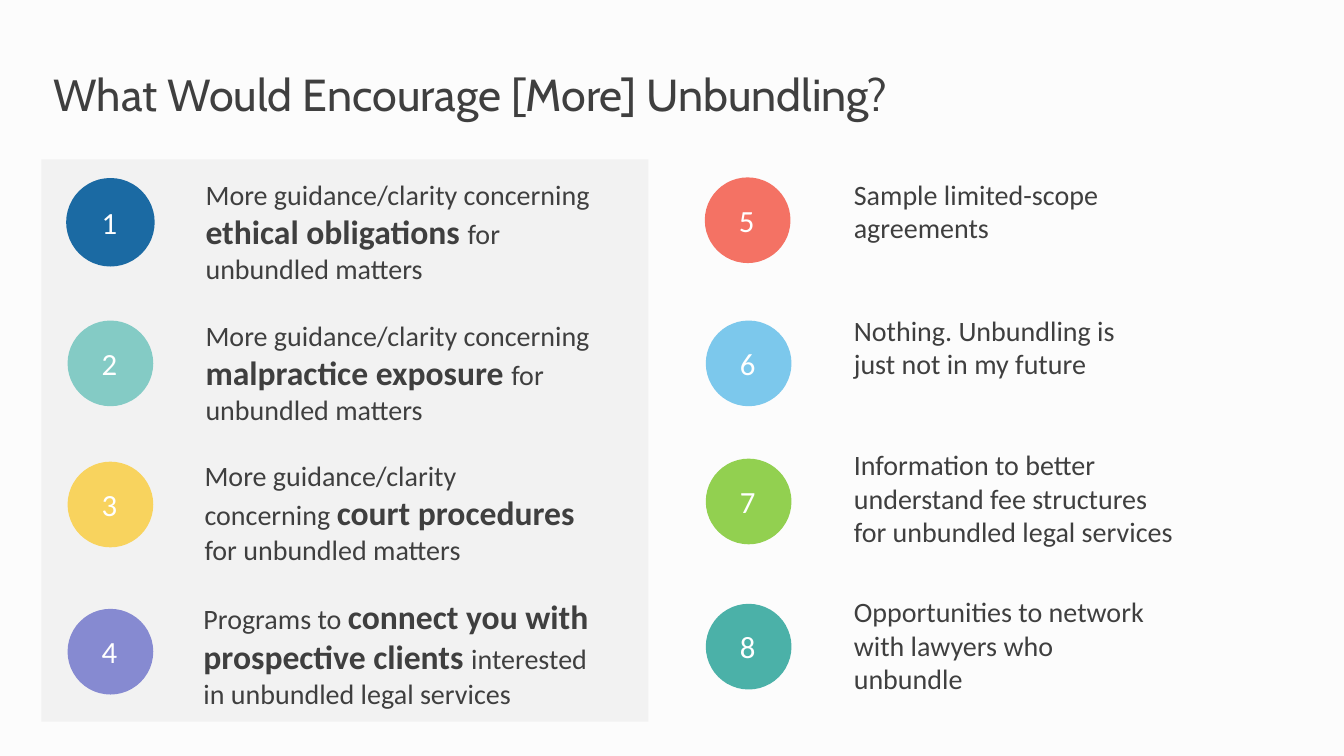
from pptx import Presentation
from pptx.dml.color import RGBColor
from pptx.enum.shapes import MSO_SHAPE
from pptx.enum.text import MSO_ANCHOR, PP_ALIGN
from pptx.util import Inches, Pt

RECTANGLE, OVAL = MSO_SHAPE.RECTANGLE, MSO_SHAPE.OVAL
MIDDLE, LEFT = MSO_ANCHOR.MIDDLE, PP_ALIGN.LEFT

BACKGROUND = RGBColor(0xFC, 0xFC, 0xFC)
PANEL = RGBColor(0xF2, 0xF2, 0xF2)
INK = RGBColor(0x3F, 0x3F, 0x3F)
WHITE = RGBColor(0xFF, 0xFF, 0xFF)
BLUE = RGBColor(0x1B, 0x6A, 0xA3)
MINT = RGBColor(0x84, 0xCB, 0xC5)
YELLOW = RGBColor(0xF8, 0xD3, 0x5E)
VIOLET = RGBColor(0x86, 0x8A, 0xD1)
CORAL = RGBColor(0xF4, 0x72, 0x64)
SKY = RGBColor(0x7C, 0xC8, 0xEC)
GREEN = RGBColor(0x92, 0xD0, 0x50)
TEAL = RGBColor(0x4B, 0xB1, 0xA8)

TITLE = {"name": "Cabin", "size": Pt(32), "bold": False, "color": INK}
BODY = {"name": "Calibri", "size": Pt(20), "bold": False, "color": INK}
STRONG = {**BODY, "size": Pt(24), "bold": True}
NUMBER = {**BODY, "size": Pt(22), "color": WHITE}

CIRCLE_SIZE = 0.85
TEXT_HEIGHT = 1.3

GUIDANCE = "More guidance/clarity concerning "
MATTERS = "for unbundled matters"

# Each item: circle left and top, colour, text left, top and width, parts
LEFT_ITEMS = [
    (0.67, 1.78, BLUE, 1.94, 1.71, 4.02, (GUIDANCE, "ethical obligations ", MATTERS)),
    (0.67, 3.18, MINT, 1.94, 3.11, 4.13, (GUIDANCE, "malpractice exposure ", MATTERS)),
    (0.67, 4.58, YELLOW, 1.93, 4.5, 3.95, (GUIDANCE, "court procedures ", MATTERS)),
    (0.67, 6.04, VIOLET, 1.92, 5.86, 4.17,
     ("Programs to ", "connect you with prospective clients ",
      "interested in unbundled legal services")),
]
RIGHT_ITEMS = [
    (6.99, 1.76, CORAL, 8.37, 1.71, 3.23, ("Sample limited-scope agreements",)),
    (7, 3.18, SKY, 8.37, 3.06, 3.23, ("Nothing. Unbundling is just not in my future",)),
    (7, 4.55, GREEN, 8.37, 4.39, 3.41,
     ("Information to better understand fee structures for unbundled legal services",)),
    (7, 5.99, TEAL, 8.37, 5.85, 3.23,
     ("Opportunities to network with lawyers who unbundle",)),
]


def add_run(paragraph, text, style):
    """Append a run formatted from a dict of font values."""
    run = paragraph.add_run()
    run.text = text
    for name, value in style.items():
        if name == "color":
            run.font.color.rgb = value
        else:
            setattr(run.font, name, value)


def add_filled_shape(slide, kind, box, color):
    """Add a flat shape without an outline."""
    shape = slide.shapes.add_shape(kind, *map(Inches, box))
    shape.shadow.inherit = False
    shape.fill.solid()
    shape.fill.fore_color.rgb = color
    shape.line.fill.background()
    return shape


def add_text(slide, box, runs):
    """Add a wrapping text box with one paragraph of styled runs."""
    frame = slide.shapes.add_textbox(*map(Inches, box)).text_frame
    frame.word_wrap = True
    for text, style in runs:
        add_run(frame.paragraphs[0], text, style)


def add_title(slide, box, text):
    """Place and format the title placeholder."""
    title = slide.shapes.title
    title.left, title.top, title.width, title.height = map(Inches, box)
    title.text_frame.vertical_anchor = MIDDLE
    paragraph = title.text_frame.paragraphs[0]
    paragraph.alignment = LEFT
    add_run(paragraph, text, TITLE)


def add_column(slide, items, first_number):
    """Add numbered circles, each with its statement beside it."""
    for number, item in enumerate(items, first_number):
        left, top, color, text_left, text_top, text_width, parts = item
        circle = add_filled_shape(
            slide, OVAL, (left, top, CIRCLE_SIZE, CIRCLE_SIZE), color)
        if color == BLUE:
            circle.line.color.rgb = color
            circle.line.width = Pt(2)
        add_text(slide, (left + 0.24, top + 0.19, 0.5, 0.47), [(str(number), NUMBER)])
        add_text(slide, (text_left, text_top, text_width, TEXT_HEIGHT),
                 zip(parts, (BODY, STRONG, BODY)))


def main():
    """Build and save the slide."""
    presentation = Presentation()
    presentation.slide_width = Inches(13.33)
    presentation.slide_height = Inches(7.5)
    slide = presentation.slides.add_slide(presentation.slide_layouts[5])
    slide.background.fill.solid()
    slide.background.fill.fore_color.rgb = BACKGROUND
    add_filled_shape(slide, RECTANGLE, (0.41, 1.58, 6.02, 5.58), PANEL)
    add_title(slide, (0.43, 0.3, 12, 1.25), "What Would Encourage [More] Unbundling?")
    add_column(slide, LEFT_ITEMS, 1)
    add_column(slide, RIGHT_ITEMS, len(LEFT_ITEMS) + 1)
    presentation.save("out.pptx")


if __name__ == "__main__":
    main()
